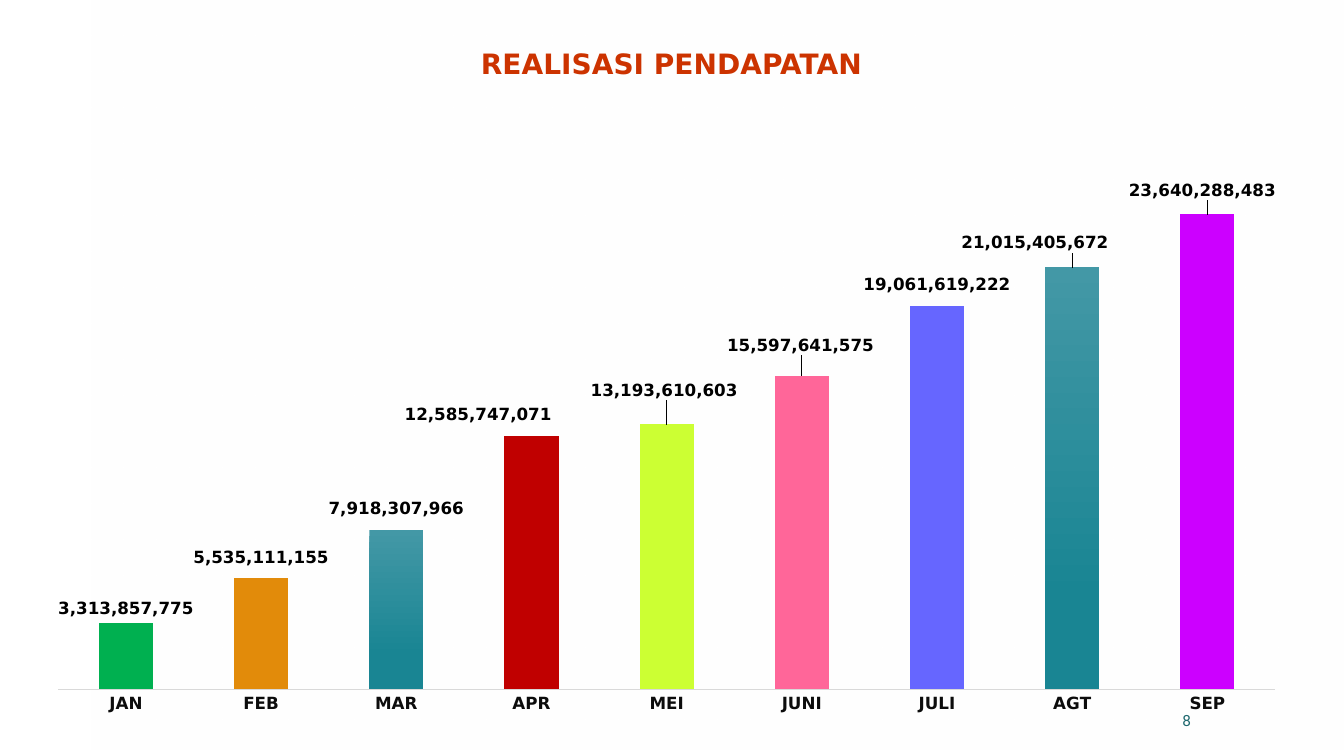
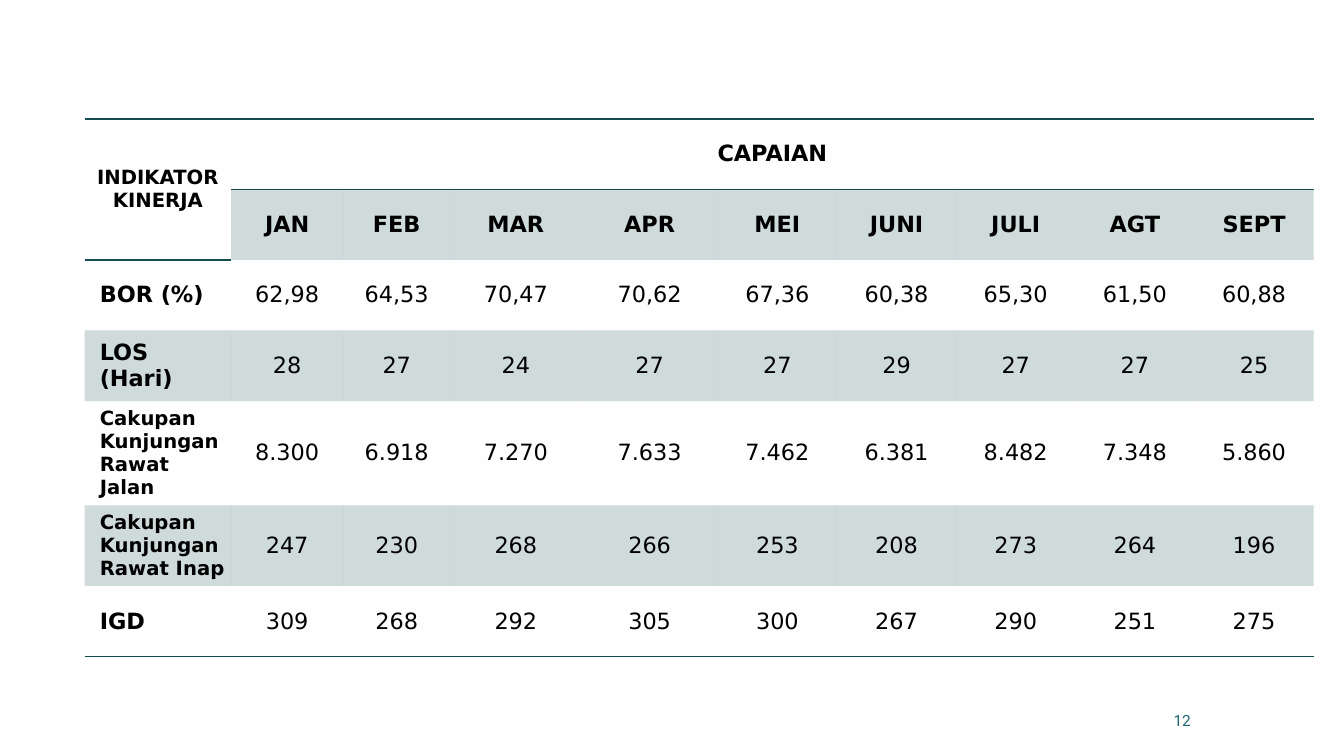
from dataclasses import dataclass

from lxml import etree
from pptx import Presentation
from pptx.chart.data import CategoryChartData
from pptx.dml.color import RGBColor
from pptx.enum.chart import XL_CHART_TYPE, XL_LABEL_POSITION, XL_TICK_MARK
from pptx.enum.shapes import MSO_SHAPE
from pptx.enum.text import MSO_ANCHOR, MSO_AUTO_SIZE, PP_ALIGN
from pptx.oxml import parse_xml
from pptx.oxml.ns import nsdecls, qn
from pptx.util import Inches, Pt

CENTER, LEFT, RIGHT = PP_ALIGN.CENTER, PP_ALIGN.LEFT, PP_ALIGN.RIGHT
MIDDLE, BOTTOM = MSO_ANCHOR.MIDDLE, MSO_ANCHOR.BOTTOM
GROW = MSO_AUTO_SIZE.SHAPE_TO_FIT_TEXT
COLUMNS = XL_CHART_TYPE.COLUMN_CLUSTERED
ABOVE_BAR = XL_LABEL_POSITION.OUTSIDE_END
NO_TICK = XL_TICK_MARK.NONE
RECTANGLE = MSO_SHAPE.RECTANGLE
WIDTH, HEIGHT = Inches(13.33), Inches(7.5)
TITLE_ONLY, BLANK = 5, 6
PLAIN_STYLE = "{2D5ABB26-0587-4C30-8999-92F81FD0307C}"
NUMBER_FORMAT = r'_(* #,##0_);_(* \(#,##0\);_(* "-"_);_(@_)'


@dataclass(frozen=True)
class Theme:
    """Colours, fonts and type sizes of the deck."""
    heading: str = "DejaVu Sans"
    body: str = "Roboto"
    white: str = "FFFFFF"
    black: str = "000000"
    title: str = "CC3300"
    teal: str = "164B4F"
    number: str = "1F696F"
    axis_text: str = "0C0C0C"
    axis_line: str = "D9D9D9"
    bar_top: str = "4398A6"
    bar_bottom: str = "198593"
    title_size: int = 20
    table_size: int = 16
    small_size: int = 14
    chart_size: int = 12
    number_size: int = 11
    base_size: int = 10


THEME = Theme()

# month, income, own bar colour, label shift in % of the chart
INCOME = [
    ("JAN", 3313857775, "00B050", (0, 0)),
    ("FEB", 5535111155, "E28B0A", (0, -1.1)),
    ("MAR", 7918307966, None, (0, -1.3)),
    ("APR", 12585747071, "C00000", (-4.3, -1.4)),
    ("MEI", 13193610603, "CCFF33", (-0.2, -3.6)),
    ("JUNI", 15597641575, "FF6699", (-0.1, -2.9)),
    ("JULI", 19061619222, "6666FF", (0, -1.3)),
    ("AGT", 21015405672, None, (-3, -1.8)),
    ("SEP", 23640288483, "CC00FF", (-0.4, -1.8)),
]

INDICATORS = [
    ["INDIKATOR KINERJA", "CAPAIAN"] + [""] * 8,
    ["", "JAN", "FEB", "MAR", "APR", "MEI", "JUNI", "JULI", "AGT", "SEPT"],
    ["BOR (%)", "62,98", "64,53", "70,47", "70,62", "67,36", "60,38", "65,30", "61,50", "60,88"],
    ["LOS (Hari)", "28", "27", "24", "27", "27", "29", "27", "27", "25"],
    ["Cakupan Kunjungan Rawat Jalan", "8.300", "6.918", "7.270", "7.633", "7.462", "6.381",
     "8.482", "7.348", "5.860"],
    ["Cakupan Kunjungan Rawat Inap", "247", "230", "268", "266", "253", "208", "273", "264",
     "196"],
    ["IGD", "309", "268", "292", "305", "300", "267", "290", "251", "275"],
]
COLUMN_WEIGHTS = [1.45, 1.11, 1.06, 1.3, 1.35] + [1.18] * 5
ROW_WEIGHTS = [0.7] * 4 + [0.74] * 2 + [0.7]


def area(left, top, width, height):
    """Turn percentages of the slide into a position and size."""
    return [int(share * side / 100) for share, side in
            zip((left, top, width, height), (WIDTH, HEIGHT, WIDTH, HEIGHT))]


def assign(target, **values):
    """Set several attributes on one object."""
    for name, value in values.items():
        setattr(target, name, value)


def style(font, size, color, name=THEME.heading, bold=False):
    """Format a font."""
    assign(font, size=Pt(size), name=name, bold=bold)
    font.color.rgb = RGBColor.from_string(color)


def paint(fill, color):
    """Give a fill one solid colour."""
    fill.solid()
    fill.fore_color.rgb = RGBColor.from_string(color)


def shade(fill, stops):
    """Give a fill a gradient from top to bottom."""
    fill.gradient()
    fill.gradient_angle = 270
    for stop, (position, color) in zip(fill.gradient_stops, stops):
        stop.position = position
        stop.color.rgb = RGBColor.from_string(color)


def set_alpha(element, *percents):
    """Set the opacity of the colours inside an element, in order."""
    for color, percent in zip(element.iter(qn("a:srgbClr")), percents):
        etree.SubElement(color, qn("a:alpha")).set("val", str(percent * 1000))


def manual_layout(**values):
    """Make a chart layout element."""
    parts = "".join(f'<c:{name} val="{value}"/>' for name, value in values.items())
    return parse_xml(f'<c:layout {nsdecls("c")}><c:manualLayout>{parts}'
                     '</c:manualLayout></c:layout>')


def dress_master(deck, slide):
    """Put the white background and the veil on the slide master."""
    master = deck.slide_master
    paint(master.background.fill, THEME.white)
    veil = slide.shapes.add_shape(RECTANGLE, *area(6.83, 0, 93.1, 100))
    veil.shadow.inherit = False
    veil.line.fill.background()
    shade(veil.fill, [(0, THEME.white), (1, THEME.white)])
    set_alpha(veil.element, 60, 0)
    master.shapes.element.insert(2, veil.element)


def add_number(slide, number):
    """Add the page number."""
    box = slide.shapes.add_textbox(*area(66.02, 92.67, 23.33, 5.33))
    assign(box.text_frame, word_wrap=True, vertical_anchor=MIDDLE)
    para = box.text_frame.paragraphs[0]
    assign(para, text=str(number), alignment=RIGHT)
    style(para.font, THEME.number_size, THEME.number, THEME.body)


def set_title(slide, text):
    """Place and format the title."""
    title = slide.shapes.title
    assign(title, **dict(zip(("left", "top", "width", "height"),
                             area(4.95, 5.07, 90.02, 6.53))))
    assign(title.text_frame, text=text, vertical_anchor=BOTTOM, auto_size=GROW, word_wrap=True,
           margin_left=Inches(0.15), margin_right=Inches(0.15),
           margin_top=Inches(0.07), margin_bottom=Inches(0.07))
    para = title.text_frame.paragraphs[0]
    assign(para, alignment=CENTER, line_spacing=0.9)
    style(para.runs[0].font, THEME.title_size, THEME.title, bold=True)


def format_axes(chart):
    """Show the month axis and hide the value axis."""
    months, values = chart.category_axis, chart.value_axis
    assign(months, major_tick_mark=NO_TICK, minor_tick_mark=NO_TICK, has_major_gridlines=False)
    style(months.tick_labels.font, THEME.chart_size, THEME.axis_text, bold=True)
    paint(months.format.line.fill, THEME.axis_line)
    months.format.line.width = Pt(0.75)
    assign(values, visible=False, has_major_gridlines=False,
           minimum_scale=0, maximum_scale=25_000_000_000)


def add_income_chart(slide):
    """Add the column chart of monthly income."""
    months, incomes, colors, shifts = zip(*INCOME)
    data = CategoryChartData(number_format=NUMBER_FORMAT)
    data.categories = months
    data.add_series("Series 1", incomes)
    chart = slide.shapes.add_chart(COLUMNS, *area(3.9, 22.67, 92.72, 73.47), data).chart
    assign(chart, has_legend=False, has_title=False)
    style(chart.font, THEME.base_size, THEME.teal, THEME.body)
    format_axes(chart)
    plot = chart.plots[0]
    assign(plot, gap_width=150, vary_by_categories=False, has_data_labels=True)
    series = plot.series[0]
    series.invert_if_negative = False
    shade(series.format.fill, [(0, THEME.bar_top), (0.78, THEME.bar_bottom)])
    assign(series.data_labels, show_value=True, number_format=NUMBER_FORMAT,
           number_format_is_linked=False, position=ABOVE_BAR)
    style(series.data_labels.font, THEME.chart_size, THEME.black, bold=True)
    for index, color in enumerate(colors):
        point = series.points[index]
        if color:
            paint(point.format.fill, color)
        style(point.data_label.font, THEME.chart_size, THEME.black, bold=True)
        point.data_label.position = ABOVE_BAR
    for label, (across, down) in zip(chart.element.iter(qn("c:dLbl")), shifts):
        if across or down:
            label.insert(1, manual_layout(x=across / 100, y=down / 100))
    plot_area = chart.element.find(".//" + qn("c:plotArea"))
    for layout in plot_area.findall(qn("c:layout")):
        plot_area.remove(layout)
    plot_area.insert(0, manual_layout(layoutTarget="inner", xMode="edge", yMode="edge",
                                      x=0, y=0.028, w=0.981, h=0.905))


def add_borders(cell, sides):
    """Draw thin lines on the named sides of a cell."""
    for index, side in enumerate(sides):
        line = parse_xml(f'<a:ln{side} {nsdecls("a")} w="{Pt(1)}"><a:solidFill>'
                         f'<a:srgbClr val="{THEME.teal}"/></a:solidFill></a:ln{side}>')
        cell._tc.get_or_add_tcPr().insert(index, line)


def fill_cell(cell, text, row, column):
    """Write and format one table cell."""
    margin = Inches(0.05)
    assign(cell, text=text, vertical_anchor=MIDDLE, margin_left=margin, margin_right=margin,
           margin_top=margin, margin_bottom=margin)
    para = cell.text_frame.paragraphs[0]
    is_label = column == 0 and row > 1
    para.alignment = LEFT if is_label else CENTER
    if is_label:
        para._p.get_or_add_pPr().set("marL", str(Inches(0.1)))
    size = THEME.small_size if len(text) > 10 else THEME.table_size
    style(para.font, size, THEME.black, bold=row < 2 or column == 0)
    if row % 2 and (row, column) != (1, 0):
        paint(cell.fill, THEME.teal)
        set_alpha(cell.fill._xPr.find(qn("a:solidFill")), 20)
    else:
        cell.fill.background()
    if row == 0:
        add_borders(cell, "TB")
    elif row == len(INDICATORS) - 1 or (row, column) == (1, 0):
        add_borders(cell, "B")


def add_indicator_table(slide):
    """Add the table of monthly indicators."""
    left, top, width, height = area(6.3, 15.73, 91.45, 66.4)
    frame = slide.shapes.add_table(len(ROW_WEIGHTS), len(COLUMN_WEIGHTS),
                                   left, top, width, height)
    table = frame.table
    assign(table, first_row=False, horz_banding=False)
    frame.element.find(".//" + qn("a:tableStyleId")).text = PLAIN_STYLE
    for column, weight in zip(table.columns, COLUMN_WEIGHTS):
        column.width = int(width * weight / sum(COLUMN_WEIGHTS))
    for row, weight in zip(table.rows, ROW_WEIGHTS):
        row.height = int(height * weight / sum(ROW_WEIGHTS))
    for row, texts in enumerate(INDICATORS):
        for column, text in enumerate(texts):
            fill_cell(table.cell(row, column), text, row, column)
    table.cell(0, 0).merge(table.cell(1, 0))
    table.cell(0, 1).merge(table.cell(0, len(COLUMN_WEIGHTS) - 1))


def main():
    """Build and save the deck."""
    deck = Presentation()
    assign(deck, slide_width=WIDTH, slide_height=HEIGHT)
    income = deck.slides.add_slide(deck.slide_layouts[TITLE_ONLY])
    dress_master(deck, income)
    add_number(income, 8)
    add_income_chart(income)
    set_title(income, "REALISASI PENDAPATAN")
    indicators = deck.slides.add_slide(deck.slide_layouts[BLANK])
    add_indicator_table(indicators)
    add_number(indicators, 12)
    deck.save("out.pptx")


if __name__ == "__main__":
    main()
